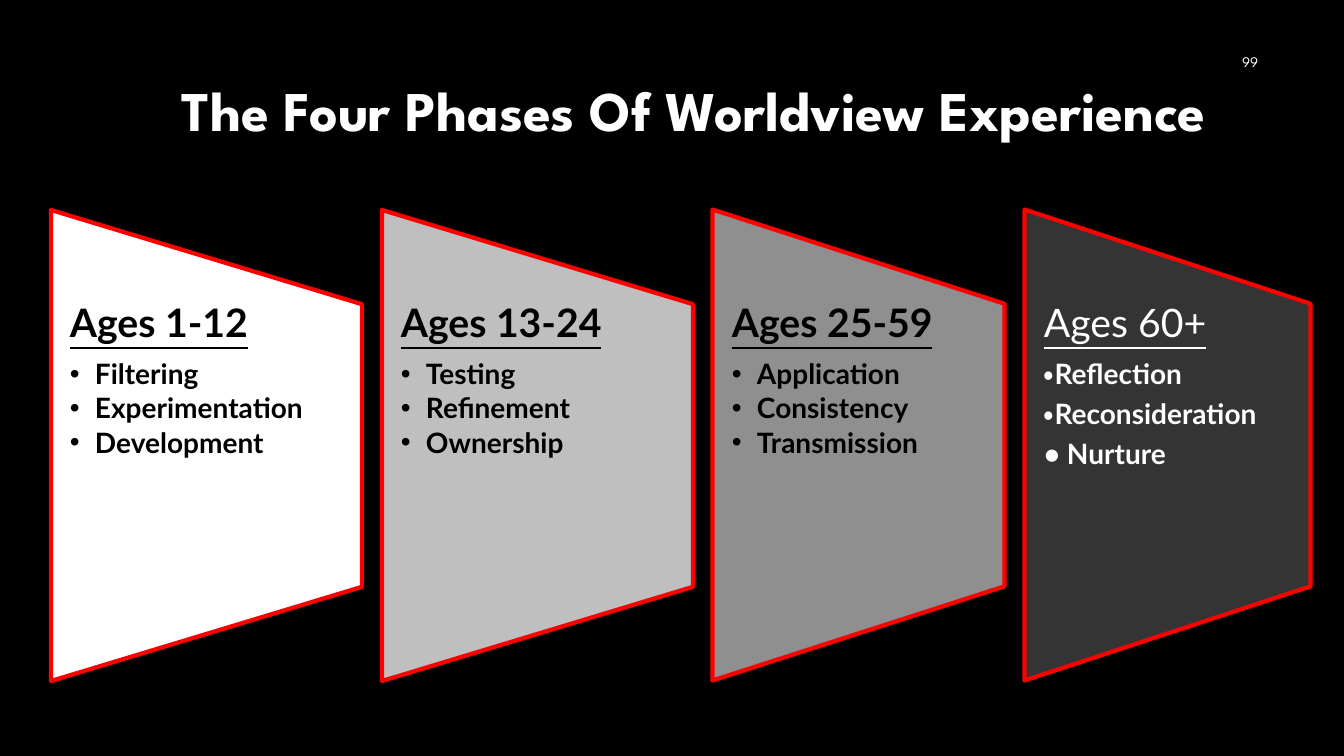
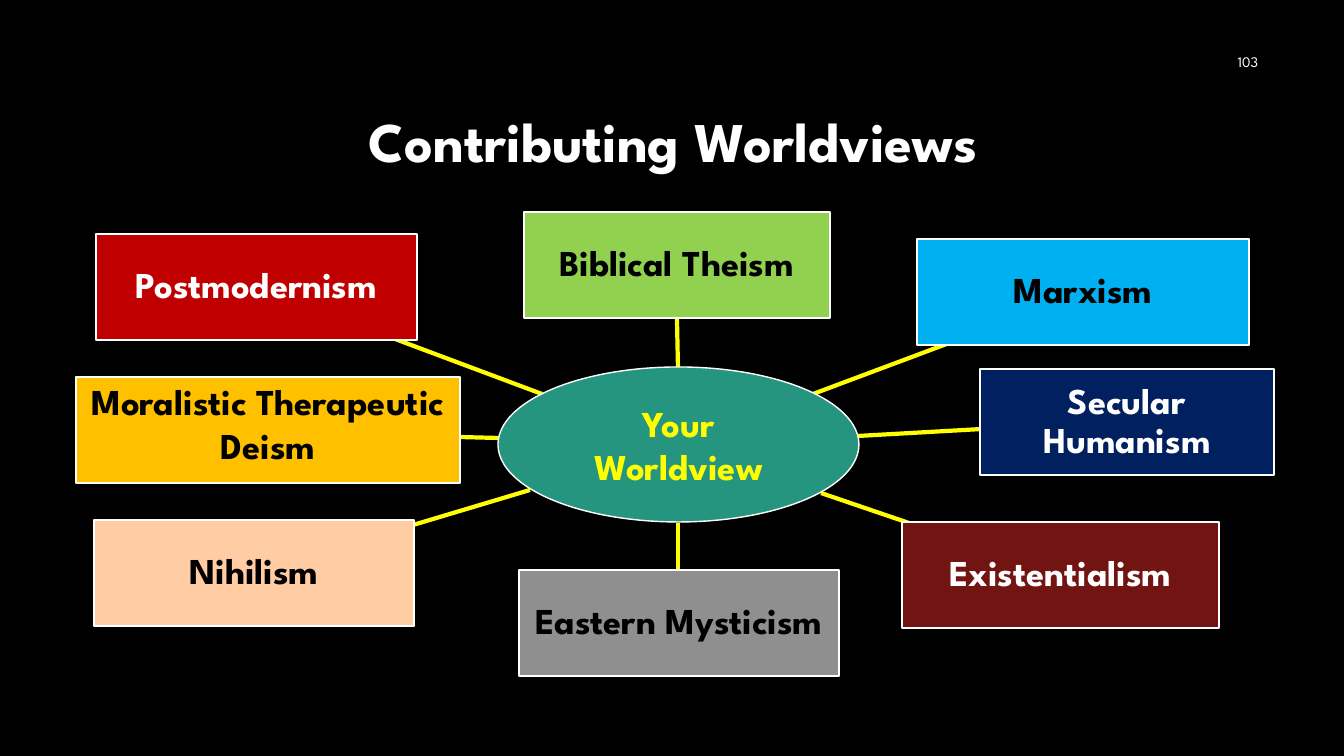
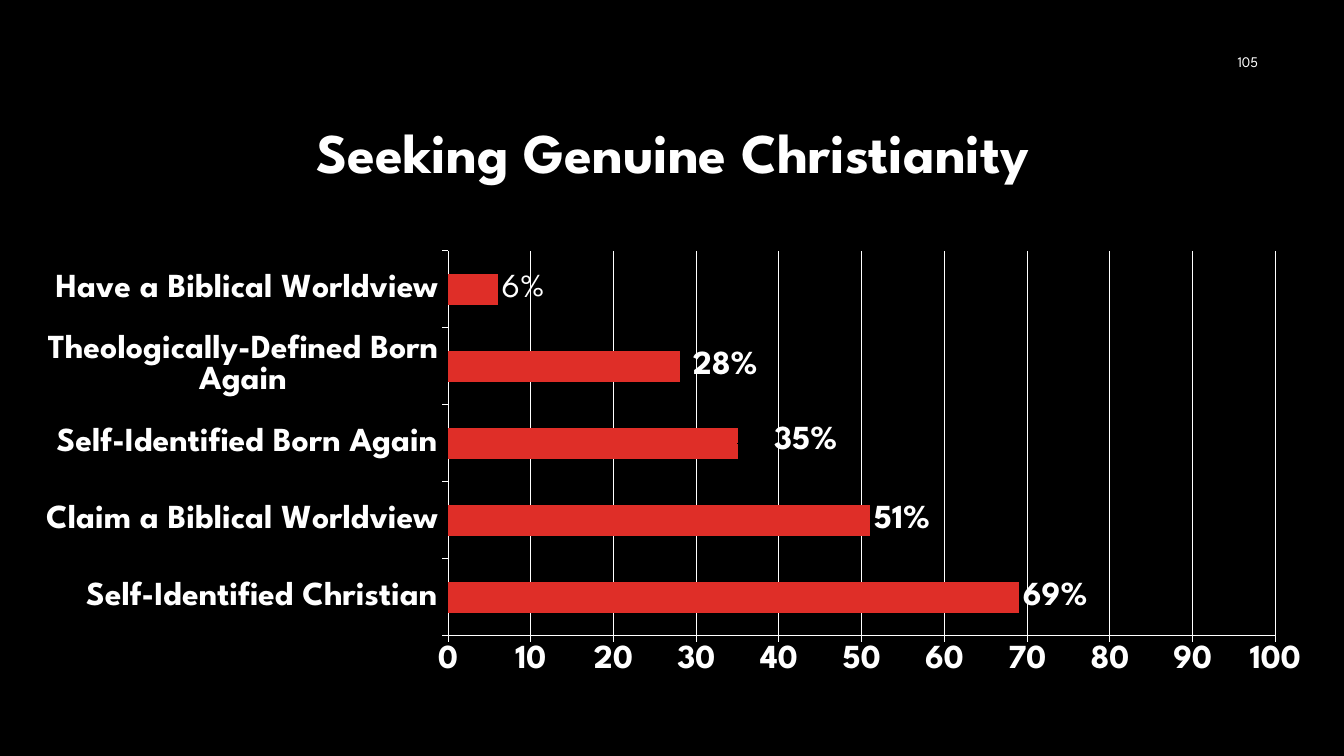
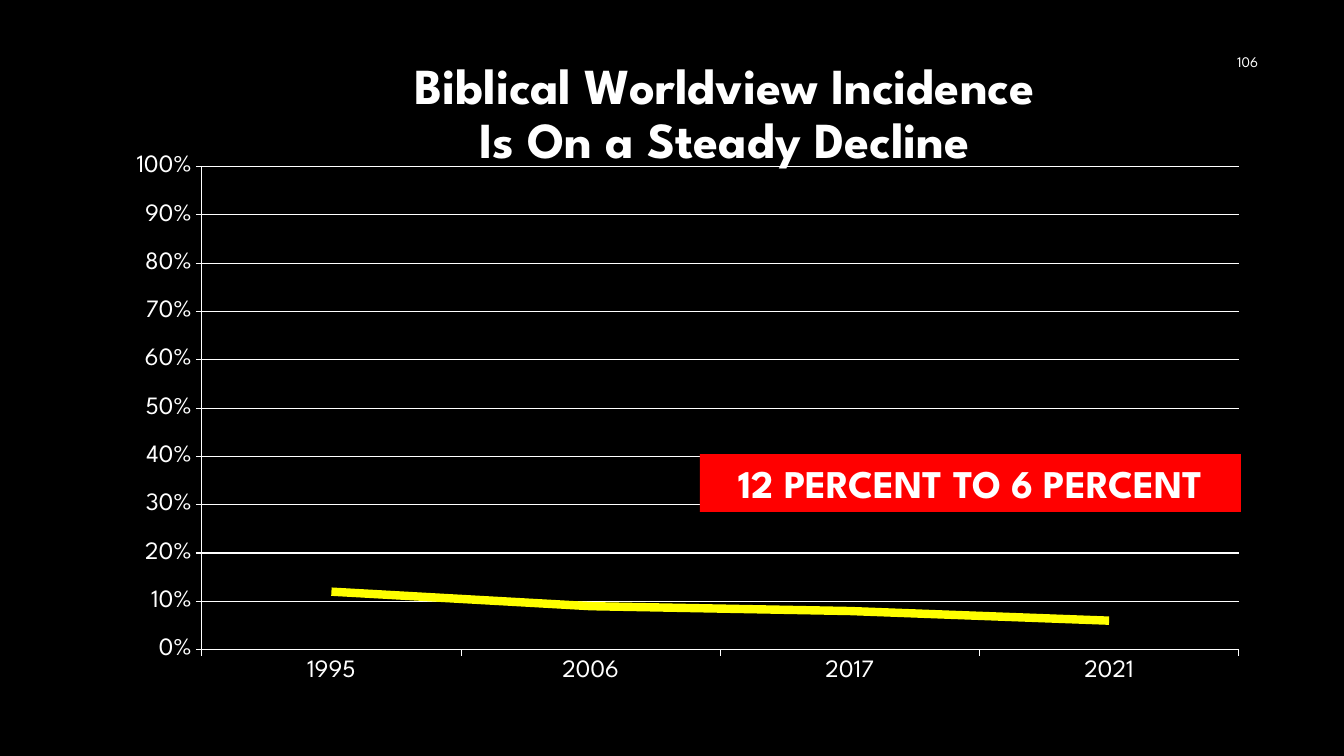
from pptx import Presentation, util as u
from pptx.chart.data import CategoryChartData
from pptx.dml.color import RGBColor
from pptx.enum import chart as charts, shapes, text
from pptx.oxml.xmlchemy import OxmlElement

PX = 9071
BLACK, WHITE, RED, YELLOW = "000000", "FFFFFF", "FF0000", "FFFF00"
SPARTAN, LATO, CJK = "League Spartan", "Lato", "Noto Sans CJK JP"
CENTER, RIGHT = text.PP_ALIGN.CENTER, text.PP_ALIGN.RIGHT
TOP, MIDDLE = text.MSO_ANCHOR.TOP, text.MSO_ANCHOR.MIDDLE


def hue(code):
    return RGBColor.from_string(code)


def write(para, words, size, ink=WHITE, layout={}, **look):
    for key, value in layout.items():
        setattr(para, key, value)
    for order, line in enumerate(words.split("\n")):
        if order:
            para.add_line_break()
        span = para.add_run()
        span.text = line
        values = {"name": SPARTAN, "bold": True, "size": u.Pt(size)} | look
        for key, value in values.items():
            setattr(span.font, key, value)
        span.font.color.rgb = hue(ink)


deck = Presentation()
deck.slide_width, deck.slide_height = 1344 * PX, 756 * PX

headings = [
    ("The Four Phases Of Worldview Experience", 40, (116, 42, 1156, 142), "99"),
    ("Contributing Worldviews", 40, (319, 84, 708, 120), "103"),
    ("Seeking Genuine Christianity", 40, (78, 84, 1190, 142), "105"),
    ("Biblical Worldview Incidence\nIs On a Steady Decline", 36, (323, 52, 803, 126), "106"),
]
pages = []
for title, title_size, title_place, number in headings:
    page = deck.slides.add_slide(deck.slide_layouts[6])
    page.background.fill.solid()
    page.background.fill.fore_color.rgb = hue(BLACK)
    for words, place, size, bold, layout in [
        (title, title_place, title_size, True, {"alignment": CENTER, "line_spacing": 0.9}),
        (number, (966, 42, 302, 40), 10.5, False, {"alignment": RIGHT}),
    ]:
        box = page.shapes.add_textbox(*[n * PX for n in place])
        box.text_frame.word_wrap = True
        box.text_frame.vertical_anchor = MIDDLE
        write(box.text_frame.paragraphs[0], words, size, layout=layout, bold=bold)
    pages.append(page)
phases_page, worldviews_page, christianity_page, decline_page = pages

phases = [
    (311, "FFFFFF", BLACK, "Ages 1-12", ["Filtering", "Experimentation", "Development"]),
    (311, "BFBFBF", BLACK, "Ages 13-24", ["Testing", "Refinement", "Ownership"]),
    (292, "8F8F8F", BLACK, "Ages 25-59", ["Application", "Consistency", "Transmission"]),
    (286, "343434", WHITE, "Ages 60+", ["•Reflection", "•Reconsideration", "• Nurture"]),
]
left, top, tall, gap = 51, 210, 471, 20
for wide, fill, ink, ages, traits in phases:
    panel = phases_page.shapes.add_shape(
        shapes.MSO_SHAPE.FLOWCHART_MANUAL_OPERATION,
        (left + (wide - tall) // 2) * PX, (top + (tall - wide) // 2) * PX, tall * PX, wide * PX)
    panel.rotation = 270
    panel.shadow.inherit = False
    panel.fill.solid()
    panel.fill.fore_color.rgb = hue(fill)
    panel.line.color.rgb = hue(RED)
    panel.line.width = u.Pt(3)

    box = phases_page.shapes.add_textbox(left * PX, 304 * PX, wide * PX, 282 * PX)
    frame = box.text_frame
    for key, value in {"word_wrap": True, "margin_left": 19 * PX, "margin_right": 19 * PX,
                       "margin_top": 0, "margin_bottom": 0}.items():
        setattr(frame, key, value)
    write(frame.paragraphs[0], ages, 28, ink, {"line_spacing": 0.9, "space_after": u.Pt(9.8)},
          name=LATO, bold=ink == BLACK, underline=True)
    for trait in traits:
        para = frame.add_paragraph()
        if trait.startswith("•"):
            layout = {"line_spacing": 0.9, "space_after": u.Pt(7)}
            write(para, "•", 20, ink, layout, name=LATO if trait[1] == " " else CJK)
            write(para, trait[1:], 20, ink, name=LATO)
        else:
            margins = para._p.get_or_add_pPr()
            margins.set("marL", str(25 * PX))
            margins.set("indent", str(-25 * PX))
            for tag, key, value in [("a:buFont", "typeface", "Arial"), ("a:buChar", "char", "•")]:
                bullet = OxmlElement(tag)
                bullet.set(key, value)
                margins.append(bullet)
            layout = {"line_spacing": 0.9, "space_after": u.Pt(3)}
            write(para, trait, 20, ink, layout, name=LATO)
    left += wide + gap

RECTANGLE, OVAL = shapes.MSO_SHAPE.RECTANGLE, shapes.MSO_SHAPE.OVAL
hub = ("Your\nWorldview", (498, 367, 361, 155), "26957F", YELLOW, OVAL, MIDDLE, 1.0)
worldviews = [
    (name, (x, y, wide, 106), fill, ink, RECTANGLE, anchor, spacing)
    for name, x, y, wide, fill, ink, anchor, spacing in [
        ("Biblical Theism", 524, 212, 306, "92D050", BLACK, MIDDLE, 0.9),
        ("Marxism", 917, 239, 332, "00B0F0", BLACK, MIDDLE, 0.9),
        ("Secular Humanism", 980, 369, 294, "002060", WHITE, MIDDLE, 0.9),
        ("Existentialism", 902, 522, 317, "721411", WHITE, MIDDLE, 0.9),
        ("Eastern Mysticism", 519, 570, 320, "8F8F8F", BLACK, MIDDLE, 0.9),
        ("Moralistic Therapeutic Deism", 76, 377, 384, "FFC000", BLACK, TOP, 1.0),
        ("Nihilism", 94, 520, 320, "FFCCA3", BLACK, MIDDLE, 0.9),
        ("Postmodernism", 96, 234, 321, "C00000", WHITE, MIDDLE, 0.9),
    ]
]
spokes = [
    (678, 368, 677, 319), (813, 394, 976, 333), (858, 436, 982, 429), (821, 493, 950, 537),
    (678, 523, 678, 570), (499, 438, 459, 437), (530, 490, 373, 537), (542, 394, 363, 327),
]
for ends in spokes:
    spoke = worldviews_page.shapes.add_connector(
        shapes.MSO_CONNECTOR.STRAIGHT, *[n * PX for n in ends])
    spoke.line.color.rgb = hue(YELLOW)
    spoke.line.width = u.Pt(3)
    spoke._element.spPr.append(OxmlElement("a:effectLst"))

for name, place, fill, ink, outline, anchor, spacing in [hub] + worldviews:
    box = worldviews_page.shapes.add_shape(outline, *[n * PX for n in place])
    box.shadow.inherit = False
    box.fill.solid()
    box.fill.fore_color.rgb = hue(fill)
    box.line.color.rgb = hue(WHITE)
    box.line.width = u.Pt(1)
    frame = box.text_frame
    frame.vertical_anchor = anchor
    for side in ("left", "right", "top", "bottom"):
        setattr(frame, "margin_" + side, 2 * PX)
    write(frame.paragraphs[0], name, 26, ink, {"alignment": CENTER, "line_spacing": spacing})

shares = {
    "Self-Identified Christian": 69,
    "Claim a Biblical Worldview": 51,
    "Self-Identified Born Again": 35,
    "Theologically-Defined Born Again": 28,
    "Have a Biblical Worldview": 6,
}
incidence = {"1995": 0.12, "2006": 0.09, "2017": 0.08, "2021": 0.06}
plots = []
for page, kind, place, points, size, bold, top_value, number_format in [
    (christianity_page, charts.XL_CHART_TYPE.BAR_CLUSTERED, (20, 242, 1307, 443),
     shares, 24, True, 100, "General"),
    (decline_page, charts.XL_CHART_TYPE.LINE, (59, 155, 1210, 551),
     incidence, 18, False, 1, "0%"),
]:
    data = CategoryChartData(number_format=number_format)
    data.categories = list(points)
    data.add_series("Series 1", list(points.values()))
    chart = page.shapes.add_chart(kind, *[n * PX for n in place], data).chart
    chart.has_legend = chart.has_title = False
    for key, value in {"name": SPARTAN, "size": u.Pt(size), "bold": bold}.items():
        setattr(chart.font, key, value)
    chart.font.color.rgb = hue(WHITE)
    scale = chart.value_axis
    for key, value in {"minimum_scale": 0, "maximum_scale": top_value,
                       "major_unit": top_value / 10, "has_major_gridlines": True}.items():
        setattr(scale, key, value)
    scale.tick_labels.number_format = number_format
    scale.tick_labels.number_format_is_linked = False
    chart.category_axis.has_major_gridlines = False
    for axis in (scale, chart.category_axis):
        axis.major_tick_mark = charts.XL_TICK_MARK.OUTSIDE
        axis.minor_tick_mark = charts.XL_TICK_MARK.NONE
    for line in (scale.format.line, chart.category_axis.format.line, scale.major_gridlines.format.line):
        line.color.rgb = hue(WHITE)
        line.width = u.Pt(0.75)
    plots.append(chart.plots[0])
bars, trend = plots

bars.vary_by_categories = False
bars.gap_width = 150
bar_series = bars.series[0]
bar_series.format.fill.solid()
bar_series.format.fill.fore_color.rgb = hue("DF2E28")
placements = []
nudges = {35: {"x": 0.025, "y": -0.004}, 28: {"x": 0.007, "y": 0}}
for order, share in enumerate(shares.values()):
    label = bar_series.points[order].data_label
    write(label.text_frame.paragraphs[0], f"{share}%", 24, bold=share != 6)
    label.position = charts.XL_LABEL_POSITION.OUTSIDE_END
    if share in nudges:
        placements.append((label._get_or_add_dLbl(), 1, nudges[share]))

trend.vary_by_categories = False
trend_series = trend.series[0]
trend_series.smooth = False
trend_series.marker.style = charts.XL_MARKER_STYLE.NONE
trend_series.format.line.color.rgb = hue(YELLOW)
trend_series.format.line.width = u.Pt(6)
placements.append((chart._chartSpace.chart.plotArea, 0, {
    "layoutTarget": "inner", "xMode": "edge", "yMode": "edge",
    "x": 0.118, "y": 0.012, "w": 0.857, "h": 0.885}))

for parent, position, values in placements:
    for old in parent.findall("{*}layout"):
        parent.remove(old)
    layout, manual = OxmlElement("c:layout"), OxmlElement("c:manualLayout")
    for key, value in values.items():
        item = OxmlElement("c:" + key)
        item.set("val", str(value))
        manual.append(item)
    layout.append(manual)
    parent.insert(position, layout)

banner = decline_page.shapes.add_shape(RECTANGLE, *[n * PX for n in (700, 454, 541, 58)])
banner.shadow.inherit = False
banner.fill.solid()
banner.fill.fore_color.rgb = hue(RED)
banner.line.fill.background()
banner.text_frame.vertical_anchor = TOP
write(banner.text_frame.paragraphs[0], "12 PERCENT TO 6 PERCENT", 28, layout={"alignment": CENTER})

deck.save("out.pptx")
